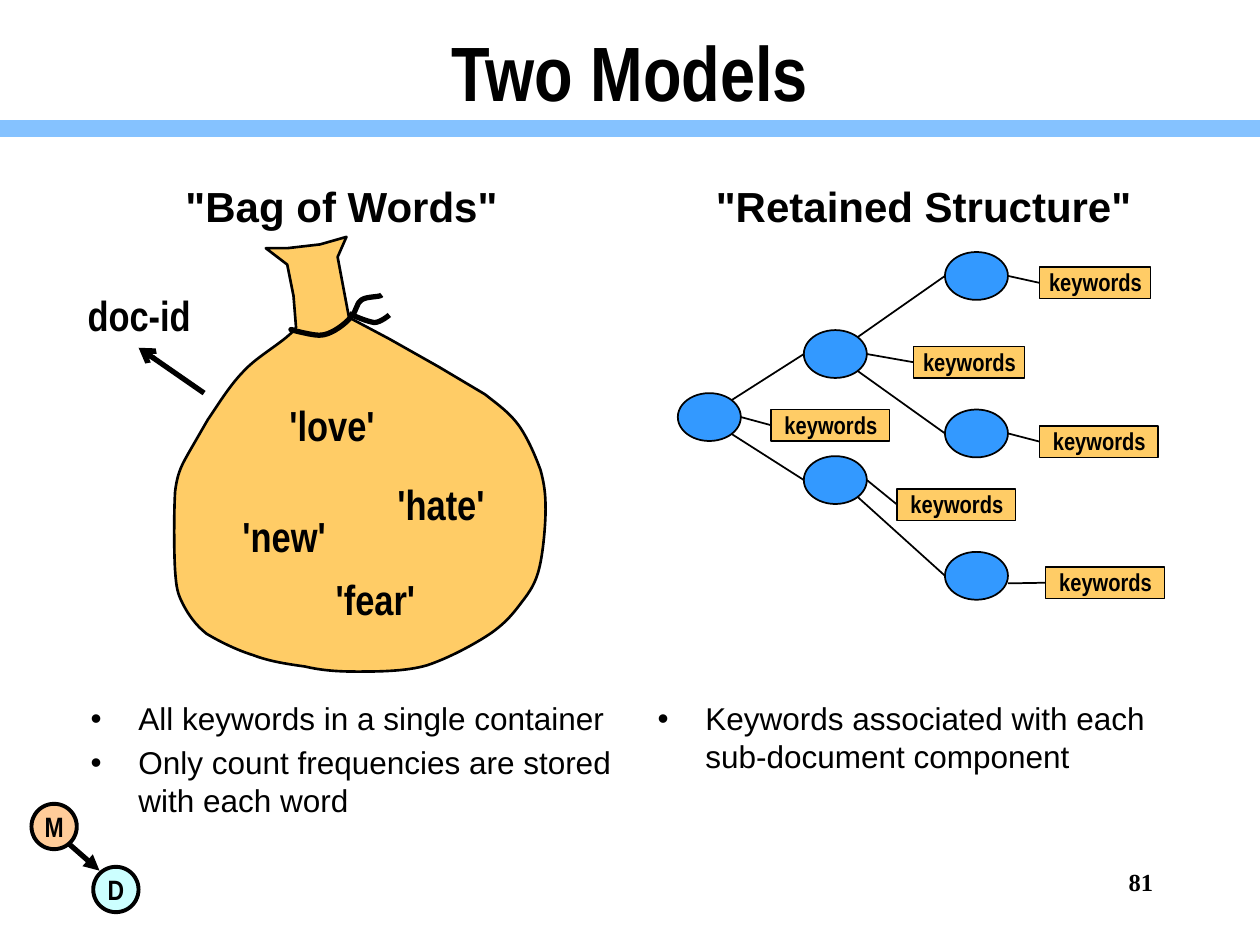
from lxml import etree
from pptx import Presentation
from pptx.dml.color import RGBColor
from pptx.enum.shapes import MSO_CONNECTOR, MSO_SHAPE
from pptx.enum.text import MSO_ANCHOR as Anchor, PP_ALIGN as Align
from pptx.oxml.ns import qn
from pptx.util import Inches, Pt

BLACK = RGBColor(0x00, 0x00, 0x00)
BAR_BLUE = RGBColor(0x85, 0xC2, 0xFF)
NODE_BLUE = RGBColor(0x33, 0x99, 0xFF)
SAND = RGBColor(0xFF, 0xCC, 0x66)
PEACH = RGBColor(0xFF, 0xCC, 0x99)
AQUA = RGBColor(0xCC, 0xFF, 0xFF)
NARROW = "Arial Narrow"

HEADINGS = [('"Bag of Words"', 0.5), ('"Retained Structure"', 5.12)]
BULLETS = [
    (0.62, 1.88, ["All keywords in a single container",
                  "Only count frequencies are stored with each word"]),
    (5.12, 0.95, ["Keywords associated with each sub-document component"]),
]
BAG_LABELS = [
    ("'love'", 2.19, 3.12, 0.89),
    ("'hate'", 3.05, 3.75, 0.9),
    ("'new'", 1.82, 4, 0.87),
    ("'fear'", 2.56, 4.5, 0.84),
]
DOC_LABEL = ("doc-id", 0.59, 2.25, 1.03)
BADGES = [("M", 0.25, 6.38, PEACH), ("D", 0.74, 6.88, AQUA)]

NODE_W, NODE_H = 0.5, 0.38
NODES = {
    "root": (5.38, 3.12),
    "upper first": (7.5, 2),
    "upper": (6.38, 2.62),
    "lower": (6.38, 3.62),
    "upper second": (7.5, 3.25),
    "lower first": (7.5, 4.38),
}
BRANCHES = [("root", "upper"), ("root", "lower"), ("upper", "upper first"),
            ("lower", "lower first"), ("upper", "upper second")]
KEYWORD_H = 0.25
KEYWORDS = [
    ("upper first", 8.25, 2.12, 0.88, 0),
    ("upper second", 8.25, 3.38, 0.94, 0),
    ("upper", 7.25, 2.75, 0.88, 0),
    ("root", 6.12, 3.25, 0.94, 0),
    ("lower", 7.12, 3.88, 0.94, 0),
    ("lower first", 8.3, 4.5, 0.94, 0.06),
]

BAG = [
    (2.28, 2.1), (2.33, 2.35), (2.35, 2.6),
    (2.28, 2.7, 2.05, 2.82, 1.94, 2.94), (1.82, 3.06, 1.72, 3.23, 1.65, 3.33),
    (1.5, 3.59),
    (1.45, 3.68, 1.41, 3.74, 1.39, 3.9), (1.38, 4.06, 1.38, 4.38, 1.39, 4.53),
    (1.4, 4.67, 1.41, 4.71, 1.45, 4.79), (1.49, 4.87, 1.55, 4.96, 1.64, 5.03),
    (1.74, 5.09, 1.88, 5.16, 2.01, 5.2), (2.14, 5.25, 2.28, 5.27, 2.42, 5.29),
    (2.55, 5.32, 2.67, 5.33, 2.83, 5.33), (2.99, 5.33, 3.22, 5.33, 3.39, 5.28),
    (3.57, 5.22, 3.77, 5.11, 3.89, 5.03), (4.02, 4.94, 4.08, 4.86, 4.14, 4.78),
    (4.21, 4.69, 4.25, 4.63, 4.28, 4.51), (4.31, 4.39, 4.33, 4.17, 4.33, 4.04),
    (4.33, 3.92, 4.32, 3.84, 4.29, 3.73), (4.25, 3.62, 4.19, 3.48, 4.12, 3.38),
    (4.04, 3.27, 3.95, 3.21, 3.85, 3.13),
    (3.48, 2.91), (3.09, 2.69), (2.77, 2.52), (2.68, 2.04), (2.75, 1.88),
    (2.54, 1.94), (2.28, 1.97), (2.11, 1.97), (2.28, 2.1),
]
STRINGS = [
    [(2.33, 2.62), (2.33, 2.62, 2.29, 2.61, 2.32, 2.62),
     (2.36, 2.63, 2.48, 2.66, 2.53, 2.66), (2.59, 2.66, 2.62, 2.64, 2.66, 2.62),
     (2.71, 2.59, 2.76, 2.55, 2.79, 2.51), (2.83, 2.47, 2.83, 2.4, 2.87, 2.38),
     (2.91, 2.35, 3.02, 2.36, 3.03, 2.34)],
    [(2.77, 2.49), (2.84, 2.52, 2.91, 2.55, 2.97, 2.56),
     (3.02, 2.56, 3.09, 2.5, 3.09, 2.5)],
]

prs = Presentation()
prs.slide_width, prs.slide_height = Inches(10), Inches(7.5)
slide = prs.slides.add_slide(prs.slide_layouts[6])
shapes = slide.shapes


def write(paragraph, text, size, font, bold, align):
    paragraph.alignment = align
    run = paragraph.add_run()
    run.text = text
    run.font.size, run.font.name, run.font.bold = Pt(size), font, bold
    run.font.color.rgb = BLACK


def add_text(text, box, size, font=NARROW, align=Align.CENTER, anchor=Anchor.TOP, wrap=True):
    frame = shapes.add_textbox(*map(Inches, box)).text_frame
    frame.word_wrap, frame.vertical_anchor = wrap, anchor
    write(frame.paragraphs[0], text, size, font, True, align)


def add_label(text, x, y, width):
    add_text(text, (x, y, width, 0.51), 24, wrap=False)


def add_bullets(items, box):
    frame = shapes.add_textbox(*map(Inches, box)).text_frame
    frame.word_wrap = True
    for i, item in enumerate(items):
        paragraph = frame.add_paragraph() if i else frame.paragraphs[0]
        write(paragraph, item, 18, "Arial", False, Align.LEFT)
        paragraph.space_before = Pt(3.6)
        props = paragraph._p.get_or_add_pPr()
        props.set("marL", str(Inches(0.38)))
        props.set("indent", str(-Inches(0.38)))
        etree.SubElement(props, qn("a:buFont"), typeface="Arial")
        etree.SubElement(props, qn("a:buChar"), char="•")


def paint(shape, fill, width):
    shape.shadow.inherit = False
    if fill is None:
        shape.fill.background()
    else:
        shape.fill.solid()
        shape.fill.fore_color.rgb = fill
    shape.line.color.rgb, shape.line.width = BLACK, Pt(width)
    return shape


def add_shape(preset, box, fill, width):
    return paint(shapes.add_shape(preset, *map(Inches, box)), fill, width)


def add_line(start, end, width, color=BLACK, head=None):
    line = shapes.add_connector(MSO_CONNECTOR.STRAIGHT, *map(Inches, (*start, *end)))
    line.line.color.rgb, line.line.width = color, Pt(width)
    if head:
        etree.SubElement(line.line._get_or_add_ln(), qn("a:tailEnd"), type=head)
    etree.SubElement(line._element.spPr, qn("a:effectLst"))
    return line


def add_outline(segments, fill, width, close):
    first, *rest = [tuple(map(Inches, segment)) for segment in segments]
    builder = shapes.build_freeform(*first)
    builder.add_line_segments([segment[-2:] for segment in rest], close=close)
    outline = paint(builder.convert_to_shape(), fill, width)
    edges = list(outline._element.iter(qn("a:lnTo")))
    for edge, segment in zip(edges, rest):
        if len(segment) == 6:
            edge.tag = qn("a:cubicBezTo")
            for i in (0, 2):
                control = etree.Element(qn("a:pt"), x=str(segment[i] - outline.left),
                                        y=str(segment[i + 1] - outline.top))
                edge.insert(i // 2, control)


for letter, x, y, fill in BADGES:
    frame = add_shape(MSO_SHAPE.OVAL, (x, y, 0.36, 0.36), fill, 2.25).text_frame
    frame.word_wrap, frame.vertical_anchor = False, Anchor.MIDDLE
    write(frame.paragraphs[0], letter, 16, NARROW, True, Align.CENTER)
add_line((0.55, 6.7), (0.79, 6.91), 3, head="triangle")
add_line((0, 1.02), (10, 1.02), 10, BAR_BLUE)

add_text("Two Models", (0.5, 0, 9, 1.12), 44, anchor=Anchor.MIDDLE)
for (heading, heading_x), (x, height, items) in zip(HEADINGS, BULLETS):
    add_text(heading, (heading_x, 1.5, 4.42, 0.38), 24, "Arial", anchor=Anchor.BOTTOM)
    add_bullets(items, (x, 5.5, 4.42, height))
add_text("81", (8.67, 6.83, 0.58, 0.5), 14, "Times New Roman", Align.RIGHT)

add_outline(BAG, SAND, 1.5, True)
for label in BAG_LABELS:
    add_label(*label)

for x, y in NODES.values():
    add_shape(MSO_SHAPE.OVAL, (x, y, NODE_W, NODE_H), NODE_BLUE, 1)
for parent, child in BRANCHES:
    (px, py), (cx, cy) = NODES[parent], NODES[child]
    side = 1 if cy > py else -1
    start = (px + NODE_W / 2 * (1 + 0.71), py + NODE_H / 2 * (1 + 0.71 * side))
    add_line(start, (cx, cy + NODE_H / 2), 1)
for node, x, y, width, drop in KEYWORDS:
    keyword = add_shape(MSO_SHAPE.RECTANGLE, (x, y, width, KEYWORD_H), SAND, 0.75)
    frame = keyword.text_frame
    frame.word_wrap, frame.vertical_anchor = True, Anchor.TOP
    frame.margin_left = frame.margin_bottom = Inches(0.01)
    frame.margin_top = frame.margin_right = 0
    write(frame.paragraphs[0], "keywords", 14, NARROW, True, Align.CENTER)
    nx, ny = NODES[node]
    link = add_line((x, y + KEYWORD_H / 2), (nx + NODE_W, ny + NODE_H / 2 + drop), 1)
    link.begin_connect(keyword, 1)

for string in STRINGS:
    add_outline(string, None, 3, False)
add_label(*DOC_LABEL)
add_line((1.62, 3.12), (1.1, 2.76), 3, head="arrow")

prs.save("out.pptx")
